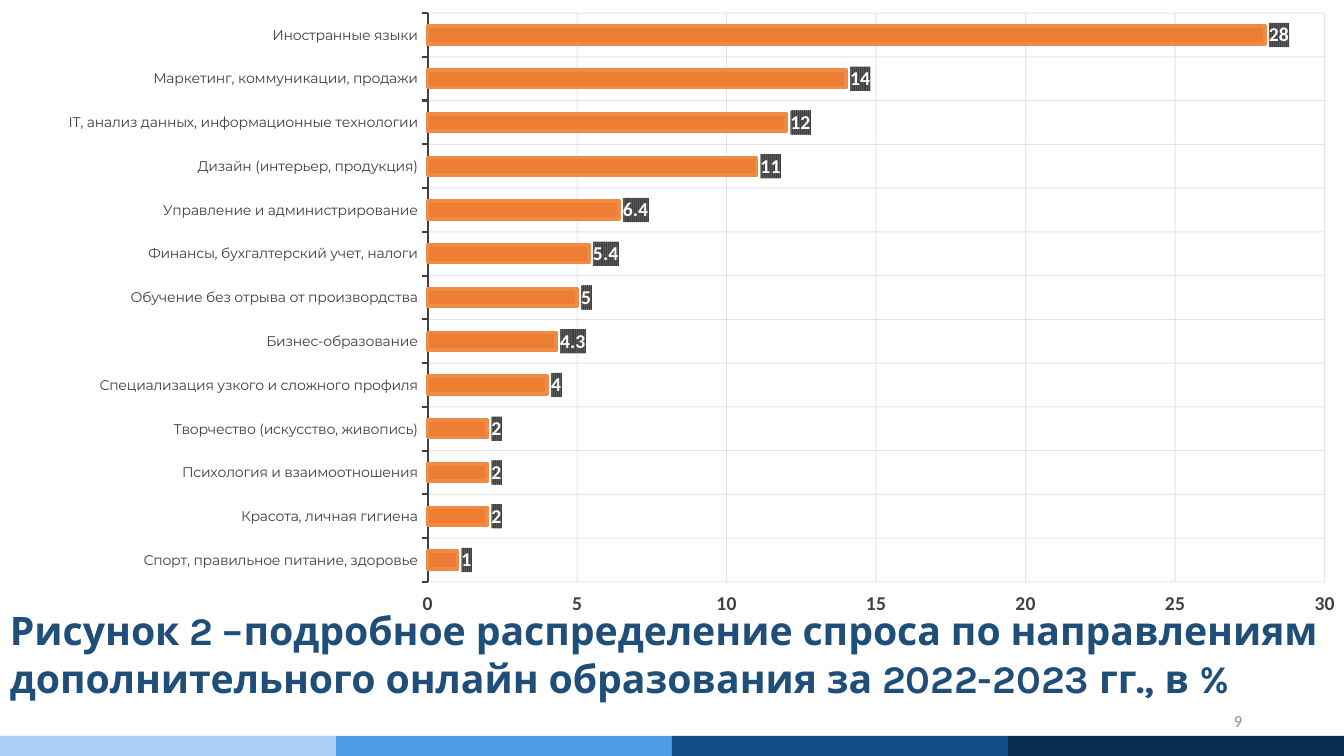
from lxml.etree import SubElement
from pptx import Presentation
from pptx.chart.data import CategoryChartData
from pptx.dml.color import RGBColor
from pptx.enum.chart import XL_CHART_TYPE, XL_LABEL_POSITION, XL_TICK_MARK
from pptx.enum.shapes import MSO_SHAPE
from pptx.enum.text import MSO_ANCHOR, PP_ALIGN
from pptx.oxml import parse_xml
from pptx.oxml.ns import nsdecls, qn
from pptx.util import Inches, Pt

COLORS = {
    "title": "1F4E79", "axis": "404040", "grid": "0D0D0D", "bar": "ED7D31",
    "bar_edge": "EF8A47", "label": "FFFFFF", "label_stripe": "595959",
    "number": "8C8C8C", "text": "000000", "border": "FFFFFF",
}
STRIP_COLORS = ["ABCEF4", "4F9BE7", "124D87", "0B2D50"]
TITLE = ("Рисунок 2 –подробное распределение спроса по направлениям "
         "дополнительного онлайн образования за 2022-2023 гг., в %")
PAGE_NUMBER = "9"
DEMAND = [
    ("Спорт, правильное питание, здоровье", 1),
    ("Красота, личная гигиена", 2),
    ("Психология и взаимоотношения", 2),
    ("Творчество (искусство, живопись)", 2),
    ("Специализация узкого и сложного профиля", 4),
    ("Бизнес-образование", 4.3),
    ("Обучение без отрыва от произвордства", 5),
    ("Финансы, бухгалтерский учет, налоги", 5.4),
    ("Управление и администрирование", 6.4),
    ("Дизайн (интерьер, продукция)", 11),
    ("IT, анализ данных, информационные технологии", 12),
    ("Маркетинг, коммуникации, продажи", 14),
    ("Иностранные языки", 28),
]
PLOT_AREA = {"x": 0.318, "y": 0.017, "w": 0.668, "h": 0.769}
SLIDE_WIDTH, SLIDE_HEIGHT = 13.33, 7.5


def color(name):
    return RGBColor.from_string(COLORS[name])


def style_font(font, name, size, color_name, bold=False):
    font.name, font.size, font.bold = name, Pt(size), bold
    font.color.rgb = color(color_name)


def add_text(slide, box, text, font_style, anchor, alignment):
    shape = slide.shapes.add_textbox(*[Inches(value) for value in box])
    frame = shape.text_frame
    frame.word_wrap = True
    frame.vertical_anchor = anchor
    frame.text = text
    paragraph = frame.paragraphs[0]
    paragraph.alignment = alignment
    style_font(paragraph.runs[0].font, *font_style)
    return frame


def style_axis(axis, font_style):
    axis.has_major_gridlines = True
    axis.major_tick_mark = XL_TICK_MARK.OUTSIDE
    axis.minor_tick_mark = XL_TICK_MARK.NONE
    style_font(axis.tick_labels.font, *font_style)
    line = axis.major_gridlines.format.line
    line.width = Pt(0.75)
    line.color.rgb = color("grid")
    for solid in axis.major_gridlines._xAx.find(qn("c:majorGridlines")).iter(qn("a:srgbClr")):
        SubElement(solid, qn("a:alpha"), val="10000")


def place_plot(chart):
    plot_area = chart._chartSpace.chart.plotArea
    for layout in plot_area.findall(qn("c:layout")):
        plot_area.remove(layout)
    sizes = "".join(f'<c:{key} val="{value}"/>' for key, value in PLOT_AREA.items())
    plot_area.insert(0, parse_xml(
        f'<c:layout {nsdecls("c")}><c:manualLayout><c:layoutTarget val="inner"/>'
        f'<c:xMode val="edge"/><c:yMode val="edge"/>{sizes}</c:manualLayout></c:layout>'))
    chart._chartSpace.chart.addnext(parse_xml(
        f'<c:spPr {nsdecls("c", "a")}><a:noFill/><a:ln w="9525"><a:solidFill>'
        f'<a:srgbClr val="{COLORS["border"]}"/></a:solidFill></a:ln></c:spPr>'))


def add_labels(series):
    labels = series.data_labels
    labels.show_value = True
    labels.position = XL_LABEL_POSITION.OUTSIDE_END
    style_font(labels.font, "Calibri", 14, "label", True)
    labels._element.find(qn("c:txPr")).addprevious(parse_xml(
        f'<c:spPr {nsdecls("c", "a")}><a:pattFill prst="narVert">'
        f'<a:fgClr><a:srgbClr val="{COLORS["axis"]}"/></a:fgClr>'
        f'<a:bgClr><a:srgbClr val="{COLORS["label_stripe"]}"/></a:bgClr>'
        f'</a:pattFill><a:ln><a:noFill/></a:ln></c:spPr>'))


def add_demand_chart(slide):
    data = CategoryChartData()
    data.categories = [name for name, value in DEMAND]
    data.add_series("Series 1", [value for name, value in DEMAND])
    chart = slide.shapes.add_chart(
        XL_CHART_TYPE.BAR_CLUSTERED, 0, 0, Inches(SLIDE_WIDTH), Inches(7.35), data).chart
    chart.has_legend = False
    chart.has_title = False
    style_font(chart.font, "Calibri", 10, "text")
    place_plot(chart)
    style_axis(chart.category_axis, ("Montserrat", 10, "axis"))
    style_axis(chart.value_axis, ("Calibri", 14, "axis", True))
    axis_line = chart.category_axis.format.line
    axis_line.width = Pt(1.5)
    axis_line.color.rgb = color("axis")
    value_axis = chart.value_axis
    value_axis.format.line.fill.background()
    value_axis.minimum_scale, value_axis.maximum_scale = 0, 30
    value_axis.major_unit = 5
    plot = chart.plots[0]
    plot.gap_width = 150
    plot.vary_by_categories = False
    series = plot.series[0]
    series.format.fill.solid()
    series.format.fill.fore_color.rgb = color("bar")
    series.format.line.width = Pt(2.75)
    series.format.line.color.rgb = color("bar_edge")
    add_labels(series)


def add_strip(slide):
    width = SLIDE_WIDTH / len(STRIP_COLORS)
    for index, fill_color in enumerate(STRIP_COLORS):
        shape = slide.shapes.add_shape(
            MSO_SHAPE.RECTANGLE, Inches(index * width), Inches(7.3), Inches(width), Inches(0.21))
        shape.shadow.inherit = False
        shape.fill.solid()
        shape.fill.fore_color.rgb = RGBColor.from_string(fill_color)
        shape.line.fill.background()


def main():
    """Build the slide on demand for online education."""
    presentation = Presentation()
    presentation.slide_width = Inches(SLIDE_WIDTH)
    presentation.slide_height = Inches(SLIDE_HEIGHT)
    slide = presentation.slides.add_slide(presentation.slide_layouts[6])
    title = add_text(slide, (0, 5.93, SLIDE_WIDTH, 1.57), TITLE,
                     ("Karla", 28, "title", True), MSO_ANCHOR.TOP, PP_ALIGN.LEFT)
    title.margin_top = Inches(0.09)
    title.paragraphs[0].line_spacing = 1.0
    add_demand_chart(slide)
    add_text(slide, (9.42, 6.95, 3, 0.4), PAGE_NUMBER,
             ("Calibri", 12, "number"), MSO_ANCHOR.MIDDLE, PP_ALIGN.RIGHT)
    add_strip(slide)
    presentation.save("out.pptx")


if __name__ == "__main__":
    main()
